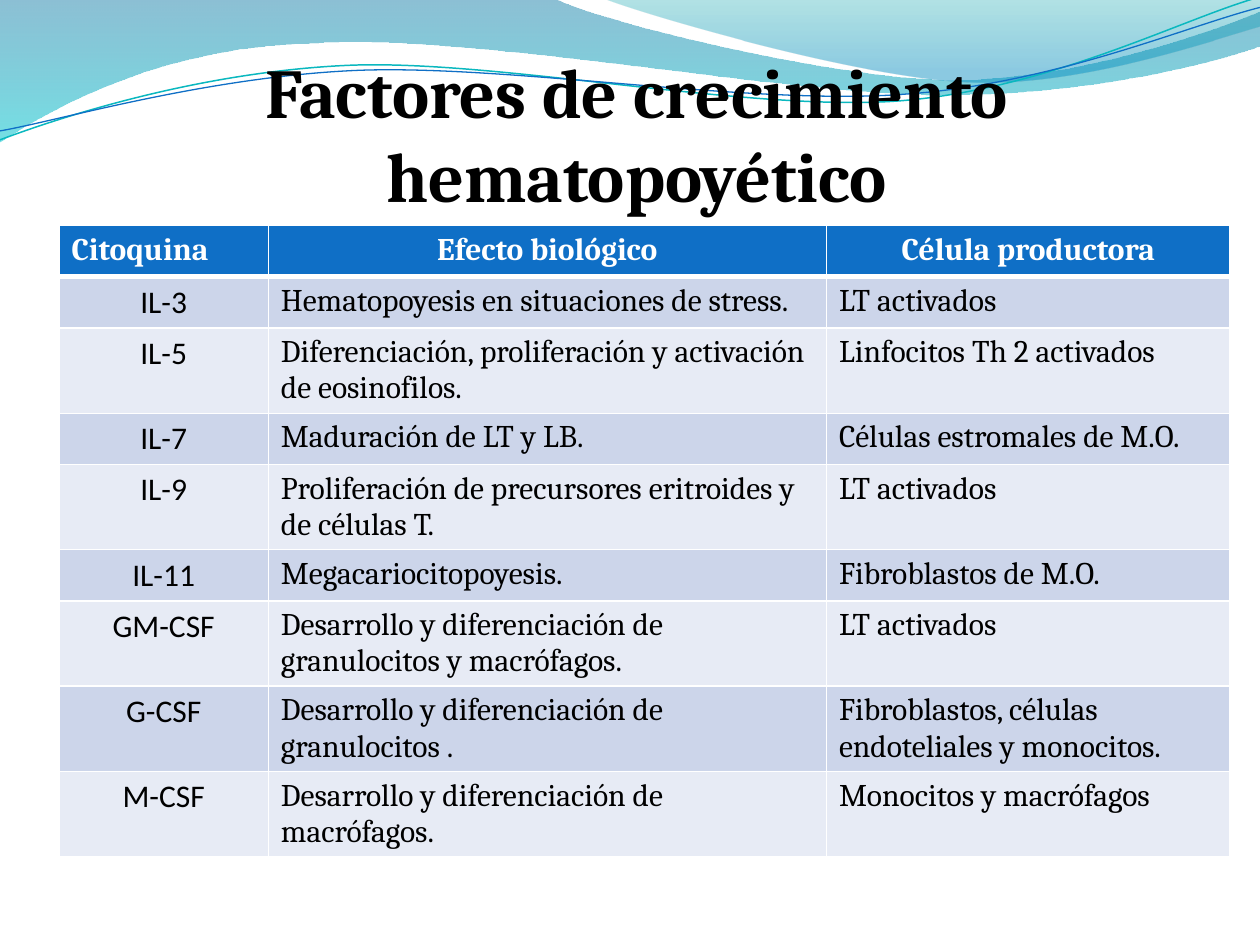
"""Build a slide with a table of haematopoietic growth factors under a wave banner."""
from dataclasses import dataclass
from typing import Optional

from lxml.etree import SubElement
from pptx import Presentation
from pptx.dml.color import RGBColor
from pptx.enum.text import MSO_ANCHOR as Anchor, MSO_AUTO_SIZE as AutoSize, PP_ALIGN as Align
from pptx.oxml.ns import qn
from pptx.util import Cm, Pt

Point = tuple[float, float]
HEADER_FILL = "0F6FC6"
BAND_FILLS = ("CCD5EA", "E7EBF5")
COLUMN_WIDTHS = (4.22, 11.25, 8.14)
ROW_HEIGHT = 1.03


@dataclass
class Stop:
    position: float
    color: str
    alpha: int


@dataclass
class Wave:
    start: Point
    segments: list[tuple[Point, ...]]
    stops: tuple[Stop, ...] = ()
    line_color: Optional[str] = None
    line_width: float = 0
    rotation: float = 0


@dataclass
class Factor:
    cytokine: str
    effect: str
    producer: str


WAVES = [
    Wave((0, 0), [
        ((11.18, -0.03),),
        ((12.09, 0.43), (16.87, 1.6), (19.25, 1.6)),
        ((21.67, 1.6), (24.33, 0.66), (25.4, 0.23)),
        ((25.43, 0.91),),
        ((24.97, 1.12), (22.1, 1.93), (18.95, 1.91)),
        ((15.8, 1.91), (9.7, 0.71), (6.53, 0.86)),
        ((3.28, 0.91), (1.17, 2.11), (-0.03, 2.87)),
        ((0, 0),),
    ], stops=(Stop(0, "0074A1", 45), Stop(1, "00C6CF", 55))),
    Wave((12.17, -0.03), [
        ((12.93, 0.28), (17.32, 1.57), (19.53, 1.65)),
        ((21.74, 1.75), (24.41, 0.81), (25.4, 0.53)),
        ((25.4, 0),),
        ((12.17, -0.03),),
    ], stops=(Stop(0, "00A1A9", 30), Stop(0.8, "008BBF", 45))),
    Wave((-0.05, 2.22), [
        ((1.19, 1.82), (4.02, 1.04), (7.05, 1.05)),
        ((10.05, 1.07), (15.02, 2.37), (18.08, 2.29)),
        ((21.13, 2.2), (23.86, 0.91), (25.41, 0.55)),
    ], line_color="0AB8BF", line_width=0.85, rotation=357.3),
    Wave((-0.04, 2.04), [
        ((1.16, 1.89), (4.17, 1.15), (7.2, 1.16)),
        ((10.25, 1.18), (15.13, 2.25), (18.19, 2.16)),
        ((21.22, 2.1), (23.93, 1.06), (25.45, 0.75)),
    ], line_color="0F6FC6", line_width=0.75, rotation=357.3),
]

HEADER = Factor("Citoquina", "Efecto biológico", "Célula productora")
FACTORS = [
    Factor("IL-3", "Hematopoyesis en situaciones de stress.", "LT activados"),
    Factor("IL-5", "Diferenciación, proliferación y activación de eosinofilos.",
           "Linfocitos Th 2 activados"),
    Factor("IL-7", "Maduración de LT y LB.", "Células estromales de M.O."),
    Factor("IL-9", "Proliferación de precursores eritroides y de células T.", "LT activados"),
    Factor("IL-11", "Megacariocitopoyesis.", "Fibroblastos de M.O."),
    Factor("GM-CSF", "Desarrollo y diferenciación de granulocitos y macrófagos.",
           "LT activados"),
    Factor("G-CSF", "Desarrollo y diferenciación de granulocitos .",
           "Fibroblastos, células endoteliales y monocitos."),
    Factor("M-CSF", "Desarrollo y diferenciación de macrófagos.", "Monocitos y macrófagos"),
]


def rgb(color: str) -> RGBColor:
    return RGBColor.from_string(color)


def write_text(frame, text: str, *, size: float = 18, font: str = "Cambria",
               color: str = "000000", bold: bool = False, align=Align.LEFT) -> None:
    paragraph = frame.paragraphs[0]
    paragraph.alignment = align
    run = paragraph.add_run()
    run.text = text
    run.font.size = Pt(size)
    run.font.name = font
    run.font.bold = bold
    run.font.color.rgb = rgb(color)


def bend_segments(shape, segments: list[tuple[Point, ...]]) -> None:
    """Turn each run of three straight steps into one cubic curve."""
    steps = iter(list(shape.element.iter(qn("a:lnTo"))))
    for segment in segments:
        first, *others = [next(steps) for _ in segment]
        if others:
            first.tag = qn("a:cubicBezTo")
            for step in others:
                first.append(step[0])
                step.getparent().remove(step)


def draw_wave(slide, wave: Wave) -> None:
    points = [wave.start, *(point for segment in wave.segments for point in segment)]
    outline = [(Cm(x), Cm(y)) for x, y in points]
    builder = slide.shapes.build_freeform(*outline[0])
    builder.add_line_segments(outline[1:], close=bool(wave.stops))
    shape = builder.convert_to_shape()
    bend_segments(shape, wave.segments)
    shape.rotation = wave.rotation
    shape.shadow.inherit = False
    if wave.stops:
        shape.line.fill.background()
        shape.fill.gradient()
        shape.fill.gradient_angle = 270
        elements = shape.element.iter(qn("a:gs"))
        for stop, gradient_stop, element in zip(wave.stops, shape.fill.gradient_stops, elements):
            gradient_stop.position = stop.position
            gradient_stop.color.rgb = rgb(stop.color)
            SubElement(element[0], qn("a:alpha"), val=str(stop.alpha * 1000))
    else:
        shape.fill.background()
        shape.line.color.rgb = rgb(wave.line_color)
        shape.line.width = Pt(wave.line_width)


def set_borders(cell, *, top: float = 1, bottom: float = 1) -> None:
    properties = cell._tc.get_or_add_tcPr()
    for side, width in (("L", 1), ("R", 1), ("T", top), ("B", bottom)):
        line = SubElement(properties, qn(f"a:ln{side}"), w=str(Pt(width)))
        fill = SubElement(line, qn("a:solidFill"))
        SubElement(fill, qn("a:srgbClr"), val="FFFFFF")


def draw_title(slide, text: str) -> None:
    title = slide.shapes.title
    title.left, title.top, title.width, title.height = Cm(1.4), Cm(1.19), Cm(22.86), Cm(3.18)
    frame = title.text_frame
    frame.word_wrap = True
    frame.auto_size = AutoSize.NONE
    frame.vertical_anchor = Anchor.BOTTOM
    frame.margin_left = frame.margin_right = frame.margin_bottom = 0
    frame.margin_top = Cm(0.13)
    write_text(frame, text, size=40, bold=True, align=Align.CENTER)
    title.element.getparent().append(title.element)


def draw_table(slide, header: Factor, factors: list[Factor]) -> None:
    rows = [header, *factors]
    table = slide.shapes.add_table(len(rows), len(COLUMN_WIDTHS), Cm(1.19), Cm(4.55),
                                   Cm(sum(COLUMN_WIDTHS)), Cm(ROW_HEIGHT * len(rows))).table
    for column, width in zip(table.columns, COLUMN_WIDTHS):
        column.width = Cm(width)
    for index, factor in enumerate(rows):
        is_header = index == 0
        fill = HEADER_FILL if is_header else BAND_FILLS[(index - 1) % 2]
        for column, text in enumerate((factor.cytokine, factor.effect, factor.producer)):
            cell = table.cell(index, column)
            set_borders(cell, top=3 if index == 1 else 1, bottom=3 if is_header else 1)
            cell.fill.solid()
            cell.fill.fore_color.rgb = rgb(fill)
            centred = is_header != (column == 0)
            write_text(cell.text_frame, text, bold=is_header,
                       font="Calibri" if column == 0 and not is_header else "Cambria",
                       color="FFFFFF" if is_header else "000000",
                       align=Align.CENTER if centred else Align.LEFT)


def main() -> None:
    presentation = Presentation()
    presentation.slide_width, presentation.slide_height = Cm(25.4), Cm(19.05)
    slide = presentation.slides.add_slide(presentation.slide_layouts[5])
    for wave in WAVES:
        draw_wave(slide, wave)
    draw_title(slide, "Factores de crecimiento hematopoyético")
    draw_table(slide, HEADER, FACTORS)
    presentation.save("out.pptx")


if __name__ == "__main__":
    main()
